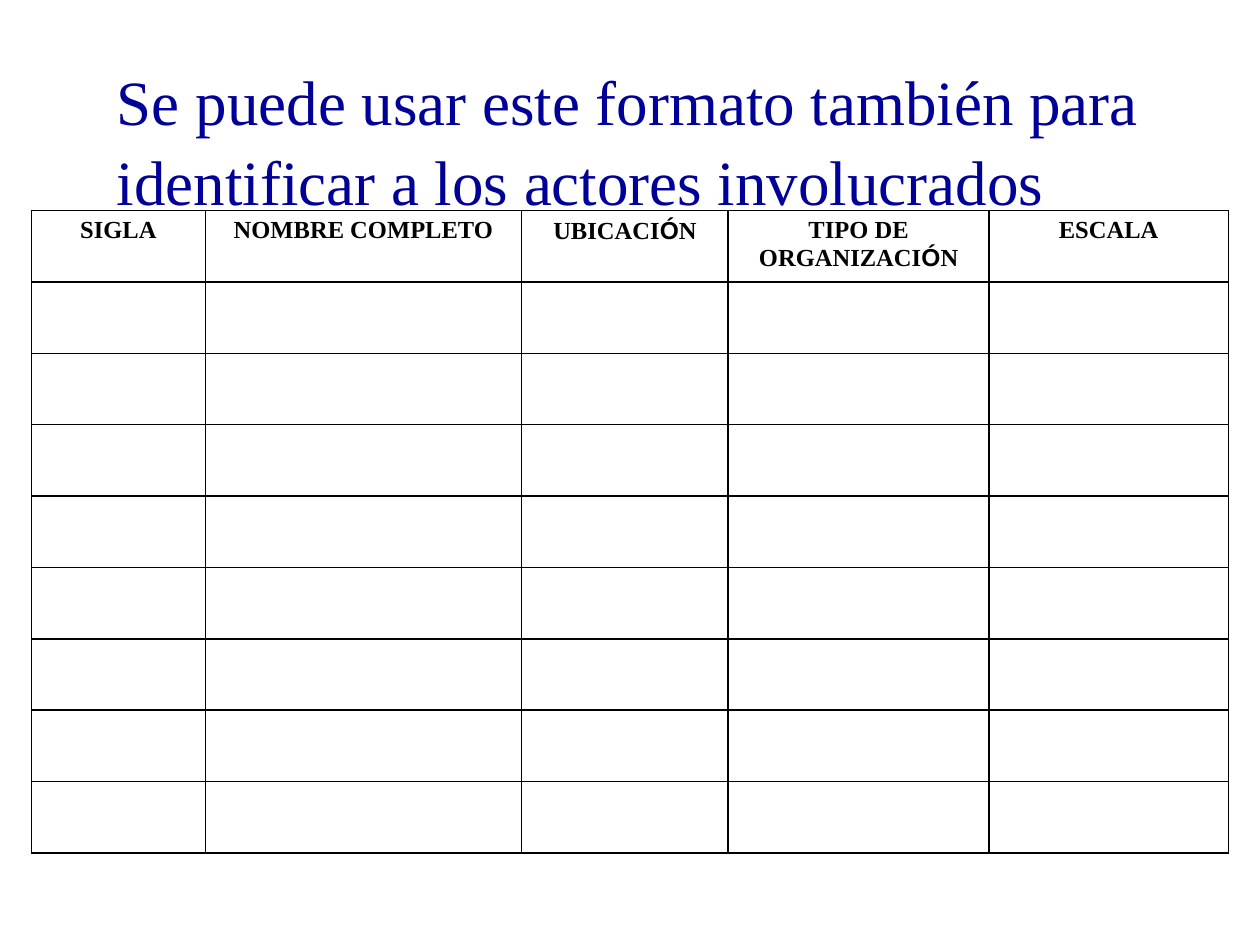
from dataclasses import dataclass

from lxml import etree
from pptx import Presentation
from pptx.dml.color import RGBColor as RGB
from pptx.enum.text import MSO_AUTO_SIZE as AutoSize, PP_ALIGN as Align
from pptx.oxml.ns import qn
from pptx.util import Inches, Pt


@dataclass(frozen=True)
class Theme:
    title_color: RGB = RGB(0x00, 0x00, 0x99)
    ink: RGB = RGB(0x00, 0x00, 0x00)
    paper: RGB = RGB(0xFF, 0xFF, 0xFF)
    font: str = "Times New Roman"
    accent_font: str = "Arial"
    title_size: int = 36
    header_size: int = 14
    border: int = 1


class SlideBuilder:
    def __init__(self, slide, theme):
        self.s = slide
        self.theme = theme

    def style(self, r, size, color, bold=False):
        r.font.name = self.theme.accent_font if r.text == "Ó" else self.theme.font
        r.font.size = Pt(size)
        r.font.color.rgb = color
        r.font.bold = bold

    def title(self, text, x, y, w, h):
        sp = self.s.shapes.add_textbox(Inches(x), Inches(y), Inches(w), Inches(h))
        tf = sp.text_frame
        tf.word_wrap = True
        tf.auto_size = AutoSize.SHAPE_TO_FIT_TEXT
        tf.text = text
        p = tf.paragraphs[0]
        p.line_spacing = 1.05
        self.style(p.runs[0], self.theme.title_size, self.theme.title_color)

    def borders(self, cell):
        tc_pr = cell._tc.get_or_add_tcPr()
        for i, side in enumerate(("lnL", "lnR", "lnT", "lnB")):
            ln = etree.Element(qn(f"a:{side}"), w=str(Pt(self.theme.border)))
            fill = etree.SubElement(ln, qn("a:solidFill"))
            etree.SubElement(fill, qn("a:srgbClr"), val=str(self.theme.ink))
            tc_pr.insert(i, ln)

    def header(self, cell, text):
        p = cell.text_frame.paragraphs[0]
        p.alignment = Align.CENTER
        before, accent, after = text.partition("Ó")
        for part in filter(None, (before, accent, after)):
            r = p.add_run()
            r.text = part
            self.style(r, self.theme.header_size, self.theme.ink, bold=True)

    def table(self, headers, widths, rows, x, y, h):
        frame = self.s.shapes.add_table(
            rows, len(headers), Inches(x), Inches(y), Inches(sum(widths)), Inches(h))
        tbl = frame.table
        tbl.first_row = tbl.horz_banding = False
        for col, width in zip(tbl.columns, widths):
            col.width = Inches(width)
        for row in tbl.rows:
            row.height = Inches(h / rows)
        for cell in tbl.iter_cells():
            cell.fill.solid()
            cell.fill.fore_color.rgb = self.theme.paper
            self.borders(cell)
        for cell, text in zip(tbl.rows[0].cells, headers):
            self.header(cell, text)


def main():
    prs = Presentation()
    prs.slide_width, prs.slide_height = Inches(10), Inches(7.5)
    builder = SlideBuilder(prs.slides.add_slide(prs.slide_layouts[6]), Theme())
    builder.title(
        "Se puede usar este formato también para identificar a los actores involucrados",
        0.83, 0.42, 8.58, 1.31)
    builder.table(
        ["SIGLA", "NOMBRE COMPLETO", "UBICACIÓN", "TIPO DE ORGANIZACIÓN", "ESCALA"],
        [1.38, 2.51, 1.64, 2.07, 1.9], rows=9, x=0.25, y=1.67, h=5.1)
    prs.save("out.pptx")


if __name__ == "__main__":
    main()
